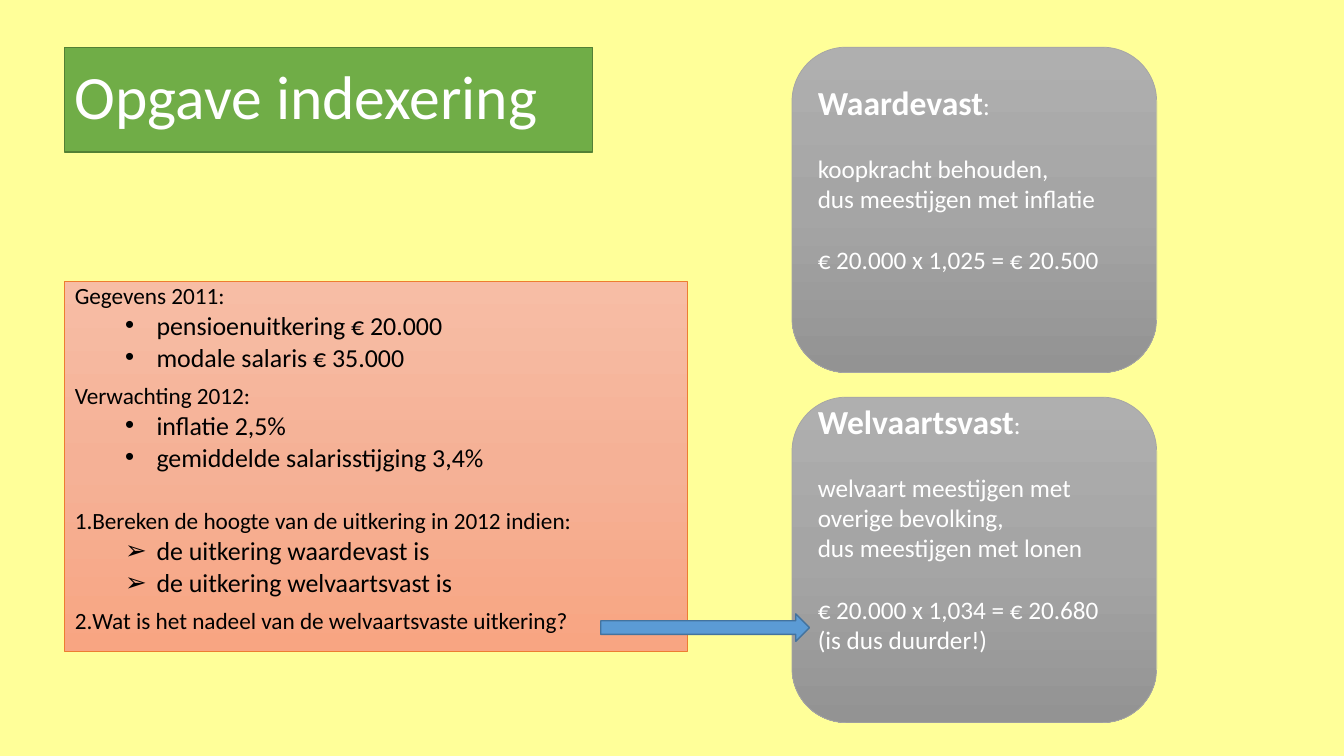
from copy import deepcopy
from dataclasses import dataclass
from typing import Optional

from lxml.etree import SubElement
from pptx import Presentation
from pptx.dml.color import RGBColor
from pptx.enum.shapes import MSO_SHAPE
from pptx.enum.text import MSO_ANCHOR, MSO_AUTO_SIZE, PP_ALIGN
from pptx.oxml.ns import qn
from pptx.util import Cm, Pt


@dataclass(frozen=True)
class Theme:
    font: str = "Calibri"
    background: str = "FFFF99"
    dark: str = "000000"
    light: str = "FFFFFF"
    title_fill: str = "70AD47"
    title_line: str = "538035"
    task_fill: tuple[str, ...] = ("F7BDA5", "F5B196", "F8A582")
    task_line: str = "ED7D31"
    card_fill: tuple[str, ...] = ("AFAFAF", "A5A5A5", "939393")
    card_line: str = "A5A5A5"
    arrow_fill: str = "5B9BD5"
    arrow_line: str = "43739E"
    title_size: float = 44
    heading_size: float = 24
    card_size: float = 18
    task_size: float = 16.6
    item_size: float = 18.5


@dataclass(frozen=True)
class Line:
    text: str
    before: float = 10
    bullet: Optional[str] = None
    numbered: bool = False


@dataclass(frozen=True)
class Card:
    top: float
    inset: float
    heading: str
    lines: tuple[Line, ...]


THEME = Theme()
CARD_GAP = 22

TASK = (
    Line("Gegevens 2011:"),
    Line("pensioenuitkering € 20.000", 5, "•"),
    Line("modale salaris € 35.000", 5, "•"),
    Line("Verwachting 2012:"),
    Line("inflatie 2,5%", 5, "•"),
    Line("gemiddelde salarisstijging 3,4%", 5, "•"),
    Line("Bereken de hoogte van de uitkering in 2012 indien:", 28, numbered=True),
    Line("de uitkering waardevast is", 5, "➢"),
    Line("de uitkering welvaartsvast is", 5, "➢"),
    Line("Wat is het nadeel van de welvaartsvaste uitkering?", numbered=True),
)

CARDS = (
    Card(1.19, 0.47, "Waardevast", (
        Line("koopkracht behouden,", CARD_GAP),
        Line("dus meestijgen met inflatie", 0),
        Line("€ 20.000 x 1,025 = € 20.500", CARD_GAP),
    )),
    Card(10.01, -0.3, "Welvaartsvast", (
        Line("welvaart meestijgen met overige bevolking,", CARD_GAP),
        Line("dus meestijgen met lonen", 0),
        Line("€ 20.000 x 1,034 = € 20.680", CARD_GAP),
        Line("(is dus duurder!)", 0),
    )),
)


def place(box, left: float, top: float, width: float, height: float) -> None:
    box.left, box.top, box.width, box.height = map(Cm, (left, top, width, height))


def paint(box, fill: str | tuple[str, ...], line: str, weight: float) -> None:
    if isinstance(fill, str):
        box.fill.solid()
        box.fill.fore_color.rgb = RGBColor.from_string(fill)
    else:
        box.fill.gradient()
        box.fill.gradient_angle = 270
        stop_list = box._element.spPr.find(qn("a:gradFill")).find(qn("a:gsLst"))
        stop_list.insert(1, deepcopy(stop_list[0]))
        for index, (stop, color) in enumerate(zip(box.fill.gradient_stops, fill)):
            stop.color.rgb = RGBColor.from_string(color)
            stop.position = index / (len(fill) - 1)
    box.line.color.rgb = RGBColor.from_string(line)
    box.line.width = Pt(weight)


def add_span(para, text: str, *, size: float, color: str, bold: bool = False) -> None:
    span = para.add_run()
    span.text = text
    span.font.name = THEME.font
    span.font.size = Pt(size)
    span.font.bold = bold
    span.font.color.rgb = RGBColor.from_string(color)


def next_para(frame, *, before: float = 0, spacing: float = 1.0):
    para = frame.paragraphs[0] if not frame.paragraphs[0].runs else frame.add_paragraph()
    para.alignment = PP_ALIGN.LEFT
    para.line_spacing = spacing
    para.space_before = Pt(before)
    return para


def set_marker(para, line: Line) -> None:
    properties = para._p.get_or_add_pPr()
    properties.set("marL", str(Cm(2.06) if line.bullet else 0))
    properties.set("indent", str(Cm(-0.79) if line.bullet else 0))
    if line.bullet:
        SubElement(properties, qn("a:buFont"), typeface="Arial")
        SubElement(properties, qn("a:buChar"), char=line.bullet)
    elif line.numbered:
        SubElement(properties, qn("a:buFont"), typeface="+mj-lt")
        SubElement(properties, qn("a:buAutoNum"), type="arabicPeriod")
    else:
        SubElement(properties, qn("a:buNone"))


def prepare_frame(box, anchor: MSO_ANCHOR):
    frame = box.text_frame
    frame.word_wrap = True
    frame.auto_size = MSO_AUTO_SIZE.NONE
    frame.vertical_anchor = anchor
    return frame


def draw_title(page) -> None:
    box = page.shapes.title
    place(box, 1.63, 1.19, 13.31, 2.64)
    paint(box, THEME.title_fill, THEME.title_line, 1)
    para = next_para(prepare_frame(box, MSO_ANCHOR.MIDDLE), spacing=0.9)
    add_span(para, "Opgave indexering", size=THEME.title_size, color=THEME.light)


def draw_task(page) -> None:
    box = page.placeholders[1]
    place(box, 1.63, 7.09, 15.7, 9.32)
    paint(box, THEME.task_fill, THEME.task_line, 0.5)
    frame = prepare_frame(box, MSO_ANCHOR.TOP)
    for line in TASK:
        para = next_para(frame, before=line.before, spacing=0.8)
        para.level = 1 if line.bullet else 0
        set_marker(para, line)
        size = THEME.item_size if line.bullet else THEME.task_size
        add_span(para, line.text, size=size, color=THEME.dark)


def add_box(page, kind: MSO_SHAPE, left: float, top: float, width: float, height: float):
    box = page.shapes.add_shape(kind, Cm(left), Cm(top), Cm(width), Cm(height))
    box.shadow.inherit = False
    return box


def draw_card(page, card: Card) -> None:
    box = add_box(page, MSO_SHAPE.ROUNDED_RECTANGLE, 19.96, card.top, 9.19, 8.2)
    paint(box, THEME.card_fill, THEME.card_line, 0.5)
    frame = prepare_frame(box, MSO_ANCHOR.TOP)
    frame.margin_top = Cm(card.inset)
    heading = next_para(frame)
    add_span(heading, card.heading, size=THEME.heading_size, color=THEME.light, bold=True)
    add_span(heading, ":", size=THEME.card_size, color=THEME.light)
    for line in card.lines:
        para = next_para(frame, before=line.before)
        add_span(para, line.text, size=THEME.card_size, color=THEME.light)


def main() -> None:
    deck = Presentation()
    deck.slide_width, deck.slide_height = Cm(33.87), Cm(19.05)
    page = deck.slides.add_slide(deck.slide_layouts[1])
    page.background.fill.solid()
    page.background.fill.fore_color.rgb = RGBColor.from_string(THEME.background)
    draw_title(page)
    draw_task(page)
    for card in CARDS:
        draw_card(page, card)
    arrow = add_box(page, MSO_SHAPE.RIGHT_ARROW, 15.14, 15.47, 5.26, 0.69)
    paint(arrow, THEME.arrow_fill, THEME.arrow_line, 1)
    deck.save("out.pptx")


if __name__ == "__main__":
    main()
